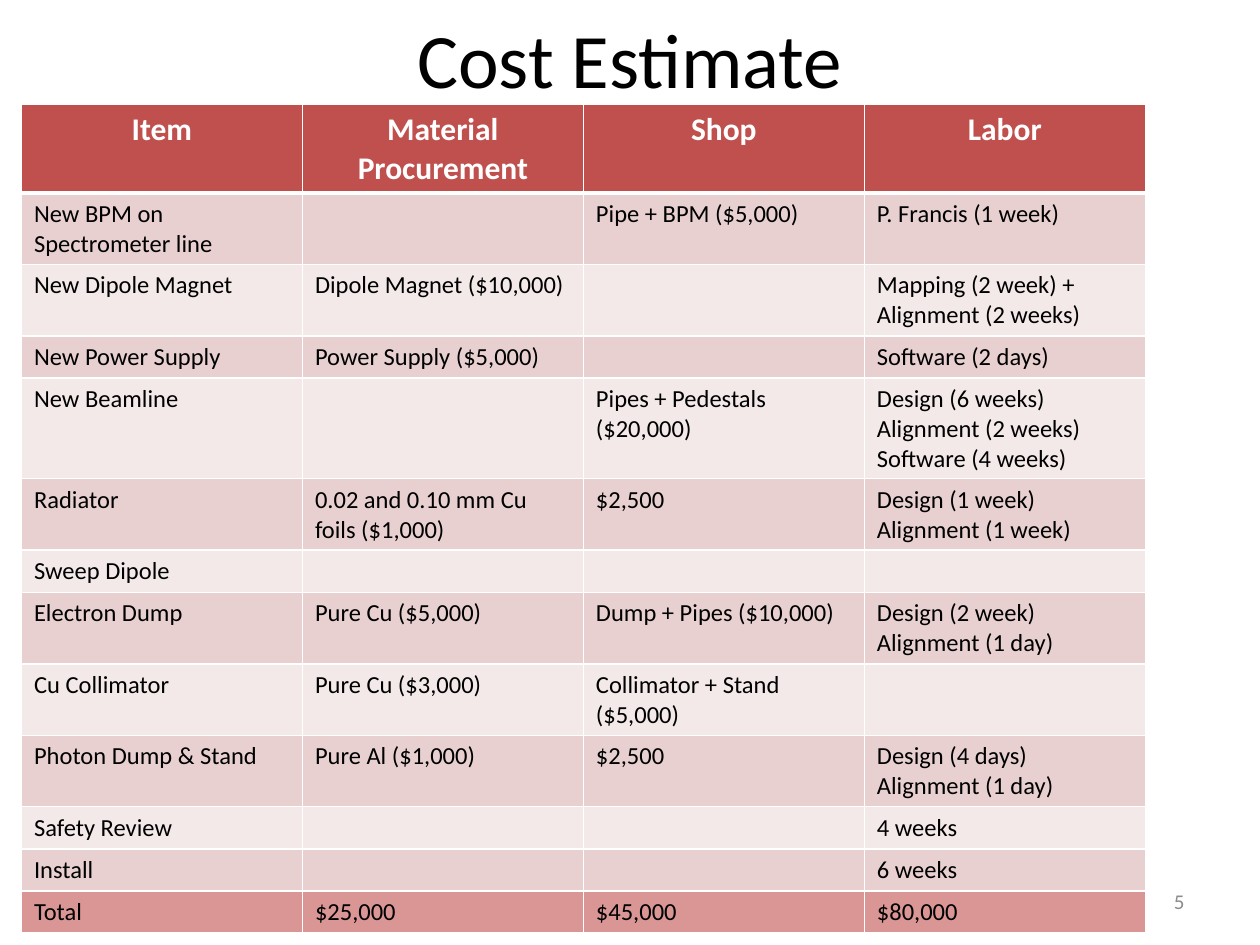
import dataclasses

import lxml.etree
import pptx
import pptx.dml.color
import pptx.enum.text
import pptx.oxml.ns
import pptx.util

Inches = pptx.util.Inches
Pt = pptx.util.Pt
Align = pptx.enum.text.PP_ALIGN
Anchor = pptx.enum.text.MSO_ANCHOR


@dataclasses.dataclass(frozen=True)
class Theme:
    font: str = "Calibri"
    ink: str = "000000"
    paper: str = "FFFFFF"
    muted: str = "8C8C8C"
    header: str = "C0504D"
    bands: tuple = ("E8D0D0", "F4E9E9")
    total: str = "D99694"
    title_size: int = 44
    header_size: int = 18
    body_size: int = 14
    number_size: int = 12
    rule: int = 1
    header_rule: int = 3


HEADINGS = ["Item", "Material\nProcurement", "Shop", "Labor"]
COSTS = [
    ["New BPM on Spectrometer line", "", "Pipe + BPM ($5,000)", "P. Francis (1 week)"],
    ["New Dipole Magnet", "Dipole Magnet ($10,000)", "", "Mapping (2 week) + Alignment (2 weeks)"],
    ["New Power Supply", "Power Supply ($5,000)", "", "Software (2 days)"],
    ["New Beamline", "", "Pipes + Pedestals ($20,000)",
     "Design (6 weeks)\nAlignment (2 weeks)\nSoftware (4 weeks)"],
    ["Radiator", "0.02 and 0.10 mm Cu foils ($1,000)", "$2,500", "Design (1 week)\nAlignment (1 week)"],
    ["Sweep Dipole", "", "", ""],
    ["Electron Dump", "Pure Cu ($5,000)", "Dump + Pipes ($10,000)", "Design (2 week)\nAlignment (1 day)"],
    ["Cu Collimator", "Pure Cu ($3,000)", "Collimator + Stand ($5,000)", ""],
    ["Photon Dump & Stand", "Pure Al ($1,000)", "$2,500", "Design (4 days)\nAlignment (1 day)"],
    ["Safety Review", "", "", "4 weeks"],
    ["Install", "", "", "6 weeks"],
]
TOTALS = ["Total", "$25,000", "$45,000", "$80,000"]


class SlideBuilder:
    """Holds the theme and the slide being filled."""

    def __init__(self, slide, theme):
        self.slide = slide
        self.theme = theme

    def set_text(self, frame, text, size, color, align, bold=False):
        frame.text = text
        font_format = {"name": self.theme.font, "size": Pt(size), "bold": bold}
        for paragraph in frame.paragraphs:
            paragraph.alignment = align
            for run in paragraph.runs:
                for key, value in font_format.items():
                    setattr(run.font, key, value)
                run.font.color.rgb = pptx.dml.color.RGBColor.from_string(color)
            if not paragraph.runs:
                # An empty cell keeps its row low only with an explicit end size.
                lxml.etree.SubElement(paragraph._p, pptx.oxml.ns.qn("a:endParaRPr"), sz=str(size * 100))

    def title(self, text, left, top, width, height):
        title = self.slide.shapes.title
        place = {"left": left, "top": top, "width": width, "height": height}
        for key, value in place.items():
            setattr(title, key, Inches(value))
        title.text_frame.vertical_anchor = Anchor.MIDDLE
        self.set_text(title.text_frame, text, self.theme.title_size, self.theme.ink, Align.CENTER)

    def slide_number(self, text, left, top, width, height):
        box = self.slide.shapes.add_textbox(*map(Inches, (left, top, width, height)))
        box.text_frame.word_wrap = True
        box.text_frame.vertical_anchor = Anchor.MIDDLE
        self.set_text(box.text_frame, text, self.theme.number_size, self.theme.muted, Align.RIGHT)

    def borders(self, cell, top, bottom):
        properties = cell._tc.get_or_add_tcPr()
        qn = pptx.oxml.ns.qn
        widths = {"lnL": self.theme.rule, "lnR": self.theme.rule, "lnT": top, "lnB": bottom}
        for side, width in widths.items():
            line = lxml.etree.SubElement(properties, qn(f"a:{side}"), w=str(Pt(width)))
            fill = lxml.etree.SubElement(line, qn("a:solidFill"))
            lxml.etree.SubElement(fill, qn("a:srgbClr"), val=self.theme.paper)

    def cost_table(self, headings, costs, totals, left, top, width, height):
        theme = self.theme
        rows = [headings, *costs, totals]
        bands = [theme.bands[index % 2] for index in range(len(costs))]
        fills = [theme.header, *bands, theme.total]
        frame = self.slide.shapes.add_table(
            len(rows), len(headings), *map(Inches, (left, top, width, height)))
        table = frame.table
        for index, (values, fill) in enumerate(zip(rows, fills)):
            is_header = index == 0
            table.rows[index].height = Inches(0.35 if is_header else 0.33)
            upper = theme.header_rule if index == 1 else theme.rule
            lower = theme.header_rule if is_header else theme.rule
            for cell, text in zip(table.rows[index].cells, values):
                self.borders(cell, upper, lower)
                cell.fill.solid()
                cell.fill.fore_color.rgb = pptx.dml.color.RGBColor.from_string(fill)
                if is_header:
                    self.set_text(cell.text_frame, text, theme.header_size, theme.paper, Align.CENTER, True)
                else:
                    self.set_text(cell.text_frame, text, theme.body_size, theme.ink, Align.LEFT)
        frame.height = Inches(height)


def main():
    deck = pptx.Presentation()
    deck.slide_width, deck.slide_height = Inches(10), Inches(7.5)
    title_only = deck.slide_layouts[5]
    builder = SlideBuilder(deck.slides.add_slide(title_only), Theme())
    builder.title("Cost Estimate", 0.5, 0, 9, 0.92)
    builder.slide_number("5", 7.17, 6.95, 2.33, 0.4)
    builder.cost_table(HEADINGS, COSTS, TOTALS, 0.17, 0.83, 8.92, 6.57)
    deck.save("out.pptx")


if __name__ == "__main__":
    main()
